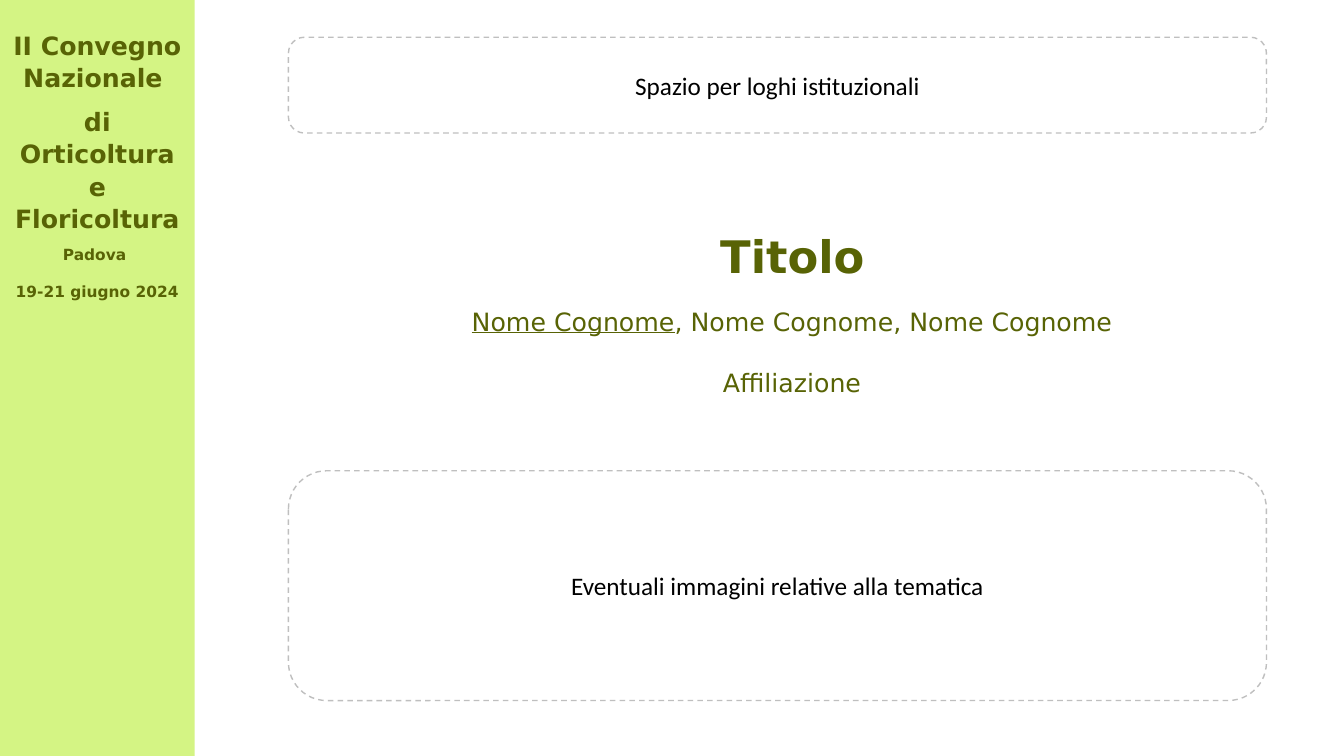
import pptx
import pptx.util
import pptx.dml.color
import pptx.enum.dml
import pptx.enum.shapes
import pptx.enum.text

OLIVE, LIME, GREY, BLACK = "586305", "D4F484", "BFBFBF", "000000"
HEADING_FONT, BODY_FONT = "DejaVu Sans", "Calibri"


def color(hex_string):
    return pptx.dml.color.RGBColor.from_string(hex_string)


class SlideBuilder:
    """Draw styled elements on one slide, with boxes given in percent of its size."""

    def __init__(self, presentation):
        self.width = presentation.slide_width
        self.height = presentation.slide_height
        self.slide = presentation.slides.add_slide(presentation.slide_layouts[6])

    def place(self, box):
        left, top, width, height = box
        return [round(share * size / 100) for share, size in (
            (left, self.width), (top, self.height), (width, self.width), (height, self.height))]

    def fill_text(self, frame, paragraphs, font, ink):
        for index, (runs, layout) in enumerate(paragraphs):
            paragraph = frame.paragraphs[0] if index == 0 else frame.add_paragraph()
            paragraph.alignment = pptx.enum.text.PP_ALIGN.CENTER
            for name, value in layout.items():
                setattr(paragraph, name, value)
            for text, style in runs:
                run = paragraph.add_run()
                run.text = text
                for name, value in {**font, **style}.items():
                    setattr(run.font, name, value)
                run.font.color.rgb = color(ink)

    def text(self, box, paragraphs, font, wrap=False):
        frame = self.slide.shapes.add_textbox(*self.place(box)).text_frame
        frame.word_wrap = wrap
        frame.auto_size = pptx.enum.text.MSO_AUTO_SIZE.SHAPE_TO_FIT_TEXT
        self.fill_text(frame, paragraphs, {"name": HEADING_FONT, **font}, OLIVE)

    def shape(self, kind, box):
        shape = self.slide.shapes.add_shape(kind, *self.place(box))
        shape.shadow.inherit = False
        return shape

    def band(self, box, fill):
        band = self.shape(pptx.enum.shapes.MSO_SHAPE.RECTANGLE, box)
        band.fill.solid()
        band.fill.fore_color.rgb = color(fill)
        band.line.fill.background()

    def dashed_area(self, box, label):
        area = self.shape(pptx.enum.shapes.MSO_SHAPE.ROUNDED_RECTANGLE, box)
        area.fill.background()
        area.line.color.rgb = color(GREY)
        area.line.width = pptx.util.Pt(1)
        area.line.dash_style = pptx.enum.dml.MSO_LINE.DASH
        area.text_frame.word_wrap = True
        area.text_frame.vertical_anchor = pptx.enum.text.MSO_ANCHOR.MIDDLE
        font = {"name": BODY_FONT, "size": pptx.util.Pt(18)}
        self.fill_text(area.text_frame, [([(label, {})], {})], font, BLACK)


def main():
    presentation = pptx.Presentation()
    presentation.slide_width = pptx.util.Inches(13.33)
    presentation.slide_height = pptx.util.Inches(7.5)
    builder = SlideBuilder(presentation)
    points = pptx.util.Pt

    sidebar_width = 14.48
    builder.band((0, 0, sidebar_width, 100), LIME)
    name_layout = {"line_spacing": 1.07, "space_after": points(8)}
    small = {"size": points(11)}
    builder.text((0, 3.07, sidebar_width, 42), [
        ([("II Convegno Nazionale ", {})], name_layout),
        ([("di Orticoltura e Floricoltura", {})], name_layout),
        ([("Padova ", small)], {}),
        ([("19-21 giugno 2024", small)], {"space_before": points(13.4)}),
    ], {"size": points(18), "bold": True}, wrap=True)

    builder.text((52.81, 29.6, 12.3, 8.53), [([("Titolo", {})], {})],
                 {"size": points(32), "bold": True})
    builder.text((34.06, 39.87, 49.74, 13.47), [
        ([("Nome Cognome", {"underline": True}), (", Nome Cognome, Nome Cognome", {})], {}),
        ([("Affiliazione", {})], {"space_before": points(22)}),
    ], {"size": points(18)})

    for top, height, label in (
        (4.93, 12.67, "Spazio per loghi istituzionali"),
        (62.27, 30.4, "Eventuali immagini relative alla tematica"),
    ):
        builder.dashed_area((21.46, top, 72.77, height), label)

    presentation.save("out.pptx")


if __name__ == "__main__":
    main()
